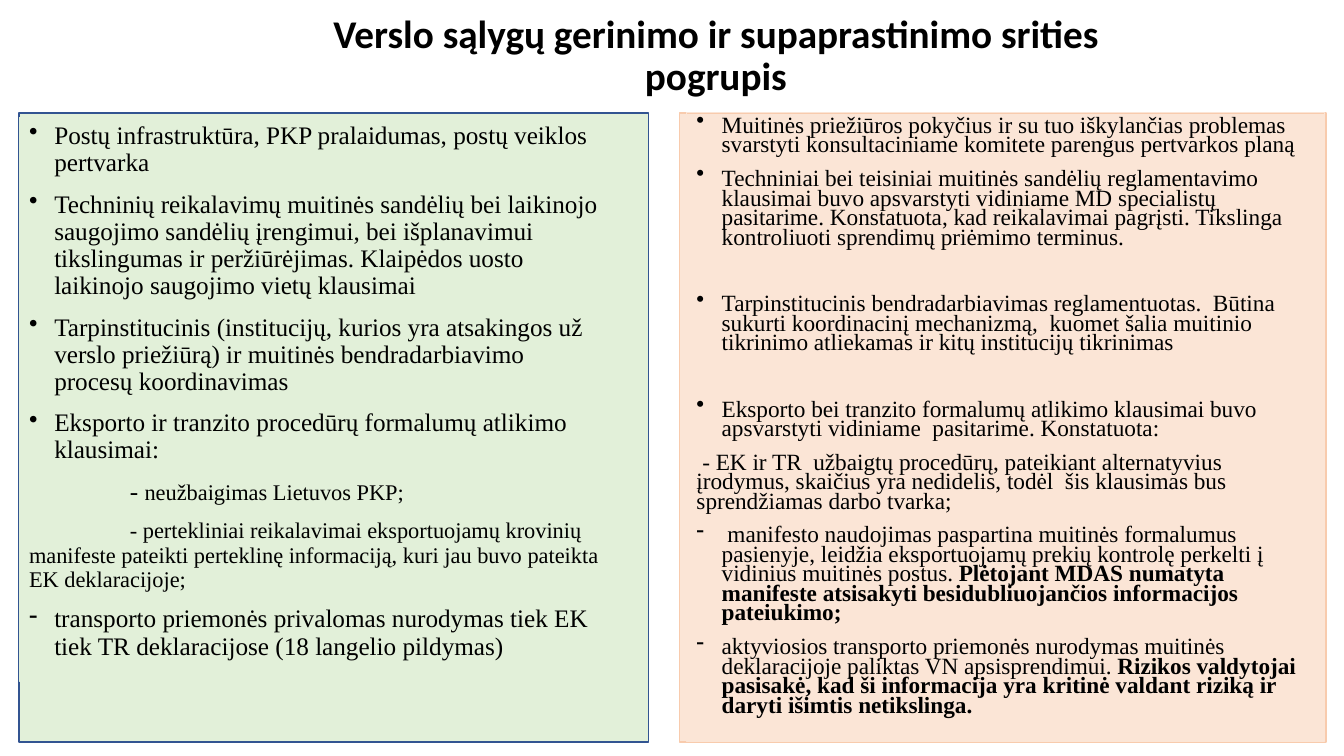
from dataclasses import dataclass

from lxml import etree
from pptx import Presentation
from pptx.dml.color import RGBColor
from pptx.enum.shapes import MSO_SHAPE
from pptx.enum.text import MSO_ANCHOR, PP_ALIGN
from pptx.oxml.ns import qn
from pptx.slide import Slide
from pptx.text.text import TextFrame
from pptx.util import Inches, Pt

RECTANGLE = MSO_SHAPE.RECTANGLE
MIDDLE, TOP = MSO_ANCHOR.MIDDLE, MSO_ANCHOR.TOP
CENTER, LEFT = PP_ALIGN.CENTER, PP_ALIGN.LEFT


@dataclass(frozen=True)
class Theme:
    title_font: str = "Calibri"
    body_font: str = "Times New Roman"
    text: str = "000000"
    green: str = "E2F0D9"
    green_frame: str = "325491"
    peach: str = "FBE5D6"
    peach_frame: str = "F8CBAD"
    title_size: float = 28
    topic_size: float = 18
    detail_size: float = 16
    answer_size: float = 16.6
    gap: float = 10
    section_gap: float = 33.6


THEME = Theme()


@dataclass(frozen=True)
class Box:
    left: float
    top: float
    width: float
    height: float

    def inches(self) -> tuple[Inches, ...]:
        return tuple(map(Inches, (self.left, self.top, self.width, self.height)))


@dataclass(frozen=True)
class Item:
    text: str
    bullet: str = "•"
    bold_ending: str = ""
    size: float = 0  # 0 takes the size of the panel
    gap: float = THEME.gap
    first_indent: float = 0
    dash_size: float = 0  # size of a leading dash that differs from the text


@dataclass(frozen=True)
class Panel:
    frame: Box
    body: Box
    fill: str
    frame_line: str
    size: float
    line_spacing: float
    items: tuple[Item, ...]


TITLE = "Verslo sąlygų gerinimo ir supaprastinimo srities pogrupis"
TITLE_BOX = Box(3, 0.07, 8.2, 0.99)

TOPICS = Panel(
    Box(0.19, 1.12, 6.24, 6.24), Box(0.19, 1.17, 5.94, 5.59),
    THEME.green, THEME.green_frame, THEME.topic_size, 0.9,
    (
        Item("Postų infrastruktūra, PKP pralaidumas, postų veiklos pertvarka"),
        Item("Techninių reikalavimų muitinės sandėlių bei laikinojo saugojimo "
             "sandėlių įrengimui, bei išplanavimui tikslingumas ir peržiūrėjimas. "
             "Klaipėdos uosto laikinojo saugojimo vietų klausimai"),
        Item("Tarpinstitucinis (institucijų, kurios yra atsakingos už verslo "
             "priežiūrą) ir muitinės bendradarbiavimo procesų koordinavimas"),
        Item("Eksporto ir tranzito procedūrų formalumų atlikimo klausimai:"),
        Item("neužbaigimas Lietuvos PKP;", "", size=THEME.detail_size,
             first_indent=1, dash_size=THEME.topic_size),
        Item("pertekliniai reikalavimai eksportuojamų krovinių manifeste pateikti "
             "perteklinę informaciją, kuri jau buvo pateikta EK deklaracijoje;", "",
             size=THEME.detail_size, first_indent=1, dash_size=THEME.detail_size),
        Item("transporto priemonės privalomas nurodymas tiek EK tiek TR "
             "deklaracijose (18 langelio pildymas)", "-"),
    ),
)

ANSWERS = Panel(
    Box(6.74, 1.12, 6.41, 6.24), Box(6.81, 1.12, 6.33, 6.24),
    THEME.peach, THEME.peach_frame, THEME.answer_size, 0.7,
    (
        Item("Muitinės priežiūros pokyčius ir su tuo iškylančias problemas svarstyti "
             "konsultaciniame komitete parengus pertvarkos planą"),
        Item("Techniniai bei teisiniai muitinės sandėlių reglamentavimo klausimai "
             "buvo apsvarstyti vidiniame MD specialistų pasitarime. Konstatuota, kad "
             "reikalavimai pagrįsti. Tikslinga kontroliuoti sprendimų priėmimo "
             "terminus."),
        Item("Tarpinstitucinis bendradarbiavimas reglamentuotas.  Būtina sukurti "
             "koordinacinį mechanizmą,  kuomet šalia muitinio tikrinimo atliekamas "
             "ir kitų institucijų tikrinimas", gap=THEME.section_gap),
        Item("Eksporto bei tranzito formalumų atlikimo klausimai buvo apsvarstyti "
             "vidiniame  pasitarime. Konstatuota:", gap=THEME.section_gap),
        Item(" - EK ir TR  užbaigtų procedūrų, pateikiant alternatyvius  įrodymus, "
             "skaičius yra nedidelis, todėl  šis klausimas bus sprendžiamas darbo "
             "tvarka;", ""),
        Item(" manifesto naudojimas paspartina muitinės formalumus pasienyje, leidžia "
             "eksportuojamų prekių kontrolę perkelti į vidinius muitinės postus. ", "-",
             "Plėtojant MDAS numatyta  manifeste atsisakyti besidubliuojančios "
             "informacijos pateiukimo;"),
        Item("aktyviosios transporto priemonės nurodymas muitinės deklaracijoje "
             "paliktas VN apsisprendimui. ", "-",
             "Rizikos valdytojai pasisakė, kad ši informacija yra kritinė valdant "
             "riziką ir daryti išimtis netikslinga."),
    ),
)


def color(code: str) -> RGBColor:
    return RGBColor.from_string(code)


def add_title(slide: Slide) -> None:
    frame = slide.shapes.add_textbox(*TITLE_BOX.inches()).text_frame
    frame.word_wrap = True
    frame.vertical_anchor = MIDDLE
    heading = frame.paragraphs[0]
    heading.text = TITLE
    heading.alignment = CENTER
    heading.line_spacing = 0.9
    heading.font.name = THEME.title_font
    heading.font.size = Pt(THEME.title_size)
    heading.font.bold = True
    heading.font.color.rgb = color(THEME.text)


def add_item(frame: TextFrame, item: Item, panel: Panel, is_first: bool) -> None:
    paragraph = frame.paragraphs[0] if is_first else frame.add_paragraph()
    paragraph.alignment = LEFT
    paragraph.line_spacing = panel.line_spacing
    paragraph.space_before = Pt(item.gap)
    paragraph.font.name = THEME.body_font
    paragraph.font.size = Pt(item.size or panel.size)
    paragraph.font.color.rgb = color(THEME.text)
    if item.dash_size:
        dash = paragraph.add_run()
        dash.text = "- "
        dash.font.size = Pt(item.dash_size)
    paragraph.add_run().text = item.text
    if item.bold_ending:
        ending = paragraph.add_run()
        ending.text = item.bold_ending
        ending.font.bold = True

    margin, indent = (0.25, -0.25) if item.bullet else (0, item.first_indent)
    properties = paragraph._p.get_or_add_pPr()
    properties.set("marL", str(Inches(margin)))
    properties.set("indent", str(Inches(indent)))
    if item.bullet:
        bullet = etree.Element(qn("a:buChar"), char=item.bullet)
        properties.find(qn("a:defRPr")).addprevious(bullet)


def add_panel(slide: Slide, panel: Panel) -> None:
    """Draw the filled frame and, over it, the outlined text."""
    backdrop = slide.shapes.add_shape(RECTANGLE, *panel.frame.inches())
    backdrop.shadow.inherit = False
    backdrop.fill.solid()
    backdrop.fill.fore_color.rgb = color(panel.fill)
    backdrop.line.color.rgb = color(panel.frame_line)
    backdrop.line.width = Pt(1)

    body = slide.shapes.add_textbox(*panel.body.inches())
    body.line.color.rgb = color(panel.fill)
    body.line.width = Pt(0.75)
    body.text_frame.word_wrap = True
    body.text_frame.vertical_anchor = TOP
    for index, item in enumerate(panel.items):
        add_item(body.text_frame, item, panel, index == 0)


def main() -> None:
    presentation = Presentation()
    presentation.slide_width = Inches(13.33)
    presentation.slide_height = Inches(7.5)
    slide = presentation.slides.add_slide(presentation.slide_layouts[6])
    add_title(slide)
    for panel in (TOPICS, ANSWERS):
        add_panel(slide, panel)
    presentation.save("out.pptx")


if __name__ == "__main__":
    main()
